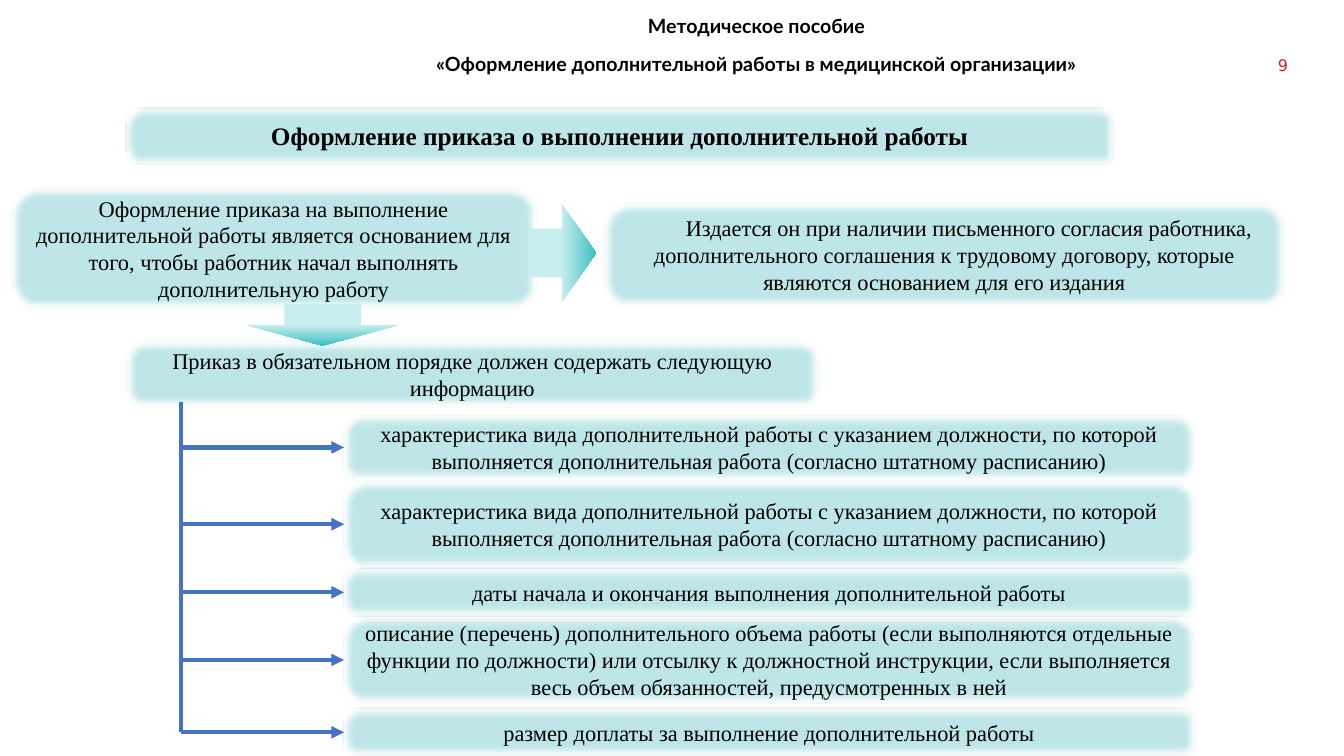
import dataclasses

import lxml.etree
import pptx
import pptx.dml.color
import pptx.enum.shapes
import pptx.enum.text
import pptx.oxml.ns
import pptx.util

Cm = pptx.util.Cm
Pt = pptx.util.Pt
RGB = pptx.dml.color.RGBColor
Shape = pptx.enum.shapes.MSO_SHAPE
Align = pptx.enum.text.PP_ALIGN
Anchor = pptx.enum.text.MSO_ANCHOR
qn = pptx.oxml.ns.qn


@dataclasses.dataclass(frozen=True)
class Theme:
    ink: RGB = RGB.from_string("000000")
    box: RGB = RGB.from_string("BEE6E8")
    edge: RGB = RGB.from_string("1E3256")
    pale: RGB = RGB.from_string("C7EDEE")
    deep: RGB = RGB.from_string("3BC0C3")
    rule: RGB = RGB.from_string("4472C4")
    page: RGB = RGB.from_string("CA2324")
    serif: str = "Times New Roman"
    sans: str = "Lato"
    digit: str = "DejaVu Sans"
    body: float = 16
    title: float = 18
    head: float = 14
    number: float = 11.4


theme = Theme()


def write(shape, text, size=theme.body, face=theme.serif, color=theme.ink,
          bold=False, align=Align.CENTER, anchor=Anchor.MIDDLE, after=0, indent=0):
    """Fill the shape with one paragraph per line of text."""
    frame = shape.text_frame
    frame.word_wrap = True
    frame.vertical_anchor = anchor
    for i, line in enumerate(text.split("\n")):
        par = frame.paragraphs[0] if i == 0 else frame.add_paragraph()
        par.alignment = align
        par.space_after = Pt(after)
        if indent:
            par._p.get_or_add_pPr().set("indent", str(Cm(indent)))
        run = par.add_run()
        run.text = line
        run.font.size = Pt(size)
        run.font.name = face
        run.font.bold = bold
        run.font.color.rgb = color


deck = pptx.Presentation()
deck.slide_width, deck.slide_height = Cm(33.87), Cm(19.05)
slide = deck.slides.add_slide(deck.slide_layouts[6])
shapes = slide.shapes

# Header and page number
page = shapes.add_textbox(Cm(31.67), Cm(1.4), Cm(0.79), Cm(0.61))
frame = page.text_frame
frame.margin_left = frame.margin_right = frame.margin_top = frame.margin_bottom = 0
write(page, "9", size=theme.number, face=theme.digit, color=theme.page,
      align=Align.RIGHT, anchor=Anchor.TOP)
head = shapes.add_textbox(Cm(7.85), Cm(0.23), Cm(22.43), Cm(1.8))
write(head, "Методическое пособие\n"
      "«Оформление дополнительной работы в медицинской организации»",
      size=theme.head, face=theme.sans, bold=True, anchor=Anchor.TOP, after=10)

# Soft-edged boxes: left, top, width, height, text, format
kind = ("характеристика вида дополнительной работы с указанием должности, "
        "по которой выполняется дополнительная работа (согласно штатному расписанию)")
items = [
    (10.46, 1.63, kind),
    (12.12, 2.18, kind),
    (14.33, 1.19, "даты начала и окончания выполнения дополнительной работы"),
    (15.54, 2.18, "описание (перечень) дополнительного объема работы (если выполняются "
     "отдельные функции по должности) или отсылку к должностной инструкции, если "
     "выполняется весь объем обязанностей, предусмотренных в ней"),
    (17.86, 1.19, "размер доплаты за выполнение дополнительной работы"),
]
boxes = [
    (3.18, 2.72, 24.87, 1.4, "Оформление приказа о выполнении дополнительной работы",
     {"size": theme.title, "bold": True}),
    (0.28, 4.75, 13.23, 3.02, "Оформление приказа на выполнение дополнительной работы "
     "является основанием для того, чтобы работник начал выполнять дополнительную работу", {}),
    (15.24, 5.13, 17.12, 2.57, "Издается он при наличии письменного согласия работника, "
     "дополнительного соглашения к трудовому договору, которые являются основанием "
     "для его издания", {"after": 10, "indent": 1.24}),
    (3.18, 8.61, 17.45, 1.65, "Приказ в обязательном порядке должен содержать следующую "
     "информацию", {}),
]
boxes += [(8.66, top, 21.44, high, text, {}) for top, high, text in items]

for left, top, wide, high, text, style in boxes:
    box = shapes.add_shape(Shape.ROUNDED_RECTANGLE, Cm(left), Cm(top), Cm(wide), Cm(high))
    box.shadow.inherit = False
    box.fill.solid()
    box.fill.fore_color.rgb = theme.box
    box.line.color.rgb = theme.edge
    box.line.width = Pt(1)
    glow = box._element.spPr.find(qn("a:effectLst"))
    lxml.etree.SubElement(glow, qn("a:softEdge")).set("rad", str(Pt(5)))
    write(box, text, **style)

# Block arrows
for left, top, wide, high, turn in [(12.93, 5.51, 2.46, 1.73, 270),
                                    (6.2, 7.67, 3.86, 1.04, 0)]:
    arrow = shapes.add_shape(Shape.DOWN_ARROW, Cm(left), Cm(top), Cm(wide), Cm(high))
    arrow.rotation = turn
    arrow.shadow.inherit = False
    arrow.line.fill.background()
    arrow.fill.gradient()
    arrow.fill.gradient_angle = 270
    for stop, place, color in zip(arrow.fill.gradient_stops, (0.5, 1),
                                  (theme.pale, theme.deep)):
        stop.position = place
        stop.color.rgb = color

# Spine with one branch to the middle of each item
spine = 4.57
mids = [top + high / 2 for top, high, text in items]
lines = [(spine, 10.13, spine, mids[-1])]
lines += [(spine, mid, 8.67, mid) for mid in mids]
for x1, y1, x2, y2 in lines:
    line = shapes.add_connector(pptx.enum.shapes.MSO_CONNECTOR.STRAIGHT,
                                Cm(x1), Cm(y1), Cm(x2), Cm(y2))
    line.line.color.rgb = theme.rule
    line.line.width = Pt(3)
    if y1 == y2:
        tip = lxml.etree.SubElement(line.line._get_or_add_ln(), qn("a:tailEnd"))
        tip.set("type", "triangle")
    lxml.etree.SubElement(line._element.spPr, qn("a:effectLst"))

deck.save("out.pptx")
